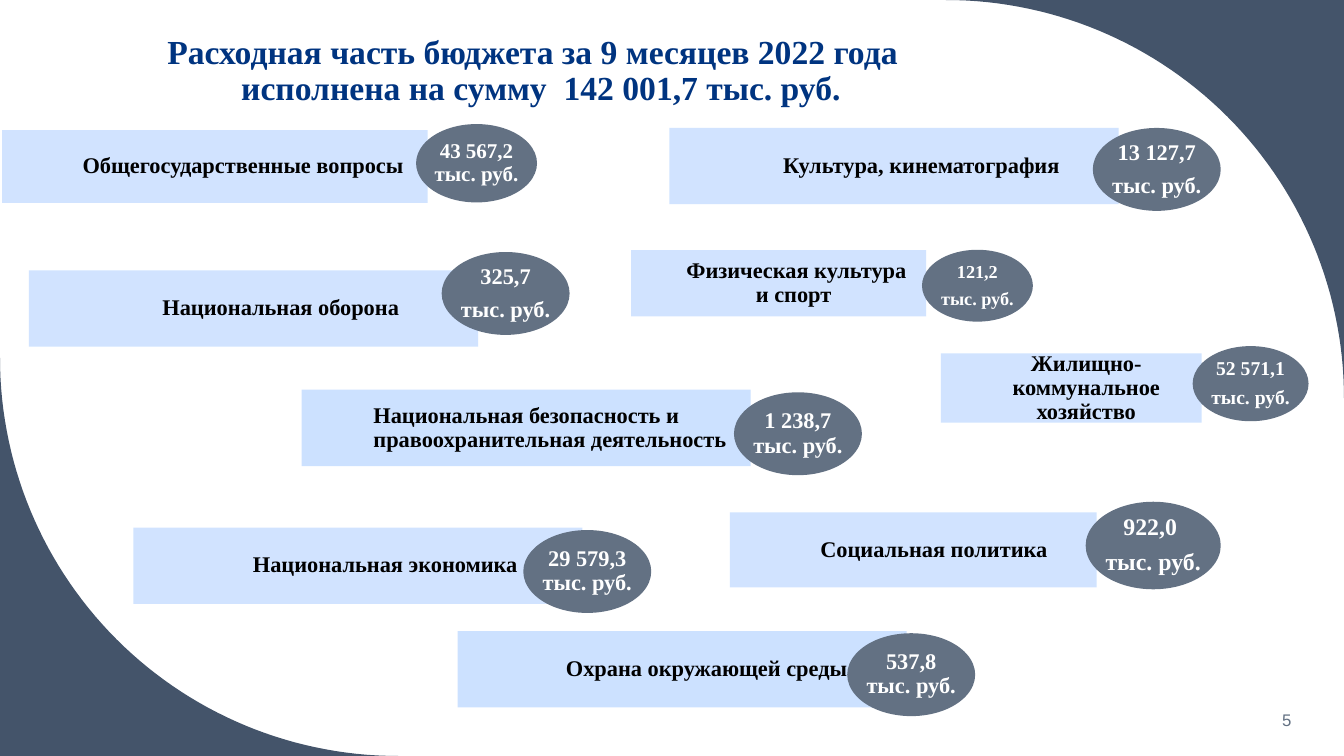
from dataclasses import dataclass
from math import cos, radians, sin

from lxml.etree import SubElement
from pptx import Presentation
from pptx.dml.color import RGBColor
from pptx.enum.shapes import MSO_SHAPE
from pptx.enum.text import MSO_ANCHOR, PP_ALIGN
from pptx.oxml.ns import qn
from pptx.util import Pt


@dataclass(frozen=True)
class Theme:
    corner: str = "44546A"
    title: str = "003480"
    bar: str = "CCE1FF"
    badge: str = "637183"
    label: str = "000000"
    amount: str = "FFFFFF"
    serif: str = "Times New Roman"
    sans: str = "Arial"
    title_size: int = 24
    label_size: int = 16
    number_size: int = 12


@dataclass(frozen=True)
class Expense:
    """bar is left, top, width, height; badge is left, top, width."""
    label: str
    amount: str
    bar: tuple
    badge: tuple
    amount_size: int = 16
    opacity: int = 90
    align: PP_ALIGN = PP_ALIGN.CENTER


THEME = Theme()
SLIDE_WIDTH, SLIDE_HEIGHT = 960, 540
CORNER_RADIUS = 284.4
ARC_STEPS = 60
BADGE_RATIO = 0.648
LABEL_INDENT = 0.16
LABEL_MARGIN = 8.4
PARAGRAPH_GAP = 0.39

EXPENSES = [
    Expense("Общегосударственные вопросы", "43 567,2 тыс. руб.",
            (1.5, 93, 304, 52), (297.2, 88.6, 86.4), 15),
    Expense("Культура, кинематография ", "13 127,7\nтыс. руб.",
            (478.2, 91.4, 320.8, 54.5), (780.6, 91.4, 91.4)),
    Expense("Национальная оборона ", "325,7\nтыс. руб.",
            (20.7, 193.1, 320.8, 54.5), (315.5, 180, 91.4)),
    Expense("Физическая культура и спорт ", "121,2\nтыс. руб.",
            (450.8, 178.7, 210.8, 47.3), (658.6, 178.4, 79.2), 13),
    Expense("Национальная безопасность и правоохранительная деятельность",
            "1 238,7 тыс. руб.",
            (215.4, 278.4, 320.8, 54.5), (524.3, 280.2, 91.4),
            opacity=100, align=PP_ALIGN.LEFT),
    Expense("Жилищно-коммунальное хозяйство", "52 571,1\nтыс. руб.",
            (672, 252.4, 186.4, 49.6), (851.9, 247.2, 82.8), 14),
    Expense("Социальная политика ", "922,0 \nтыс. руб.",
            (521.4, 366, 261.9, 53.6), (775.5, 358.4, 96.5), 17),
    Expense("Национальная экономика ", "29 579,3 тыс. руб.",
            (95.3, 376.8, 320.8, 54.5), (373.8, 378.6, 91.4)),
    Expense("Охрана окружающей среды  ", "537,8 тыс. руб.",
            (326.8, 450.8, 320.8, 54.5), (605.2, 452.3, 91.4), opacity=100),
]


def write_text(box, text, *, size, color, font=THEME.serif, bold=True,
               align=PP_ALIGN.CENTER, anchor=MSO_ANCHOR.MIDDLE,
               margins=(7.2, 3.6, 7.2, 3.6)):
    """Fill a box: a newline starts a paragraph, a vertical tab breaks a line."""
    frame = box.text_frame
    frame.word_wrap = True
    frame.vertical_anchor = anchor
    (frame.margin_left, frame.margin_top,
     frame.margin_right, frame.margin_bottom) = map(Pt, margins)
    for index, paragraph_text in enumerate(text.split("\n")):
        para = frame.add_paragraph() if index else frame.paragraphs[0]
        para.alignment = align
        para.line_spacing = 0.9
        para.space_after = Pt(round(PARAGRAPH_GAP * size, 1))
        for line_index, line in enumerate(paragraph_text.split("\v")):
            if line_index:
                para.add_line_break()
            span = para.add_run()
            span.text = line
            span.font.name = font
            span.font.size = Pt(size)
            span.font.bold = bold
            span.font.color.rgb = RGBColor.from_string(color)


def paint(shape, color, opacity=100):
    shape.shadow.inherit = False
    shape.line.fill.background()
    shape.fill.solid()
    shape.fill.fore_color.rgb = RGBColor.from_string(color)
    if opacity < 100:
        color_node = shape.fill._xPr.find(qn("a:solidFill"))[0]
        SubElement(color_node, qn("a:alpha"), val=str(opacity * 1000))


def add_corner(page, tip, center, start_angle):
    """Fill the area between a slide corner and a quarter circle."""
    builder = page.shapes.build_freeform(*map(Pt, tip), scale=1.0)
    angles = [radians(start_angle + 90 * step / ARC_STEPS)
              for step in range(ARC_STEPS + 1)]
    builder.add_line_segments(
        [(Pt(center[0] + CORNER_RADIUS * cos(angle)),
          Pt(center[1] + CORNER_RADIUS * sin(angle))) for angle in angles])
    paint(builder.convert_to_shape(), THEME.corner)


def add_text_box(page, position, text, **text_format):
    box = page.shapes.add_textbox(*map(Pt, position))
    write_text(box, text, **text_format)


def add_expense(page, expense):
    bar = page.shapes.add_shape(MSO_SHAPE.RECTANGLE, *map(Pt, expense.bar))
    paint(bar, THEME.bar, expense.opacity)
    indent = LABEL_INDENT * expense.bar[2]
    write_text(bar, expense.label, size=THEME.label_size, color=THEME.label,
               align=expense.align, margins=(indent,) + (LABEL_MARGIN,) * 3)

    left, top, width = expense.badge
    badge = page.shapes.add_shape(
        MSO_SHAPE.OVAL, *map(Pt, (left, top, width, width * BADGE_RATIO)))
    paint(badge, THEME.badge)
    write_text(badge, expense.amount, size=expense.amount_size,
               color=THEME.amount, margins=(0, 0, 0, 0))


def main():
    deck = Presentation()
    deck.slide_width, deck.slide_height = Pt(SLIDE_WIDTH), Pt(SLIDE_HEIGHT)
    page = deck.slides.add_slide(deck.slide_layouts[6])

    add_corner(page, (SLIDE_WIDTH, 0),
               (SLIDE_WIDTH - CORNER_RADIUS, CORNER_RADIUS), -90)
    add_corner(page, (0, SLIDE_HEIGHT),
               (CORNER_RADIUS, SLIDE_HEIGHT - CORNER_RADIUS), 90)
    add_text_box(page, (0, 23, 766.8, 57.6),
                 "Расходная часть бюджета за 9 месяцев 2022 года \v"
                 " исполнена на сумму  142 001,7 тыс. руб.",
                 size=THEME.title_size, color=THEME.title,
                 anchor=MSO_ANCHOR.BOTTOM)
    add_text_box(page, (799.2, 500.5, 130.3, 28.8), "5",
                 size=THEME.number_size, color=THEME.badge, font=THEME.sans,
                 bold=False, align=PP_ALIGN.RIGHT)
    for expense in EXPENSES:
        add_expense(page, expense)

    deck.save("out.pptx")


if __name__ == "__main__":
    main()
